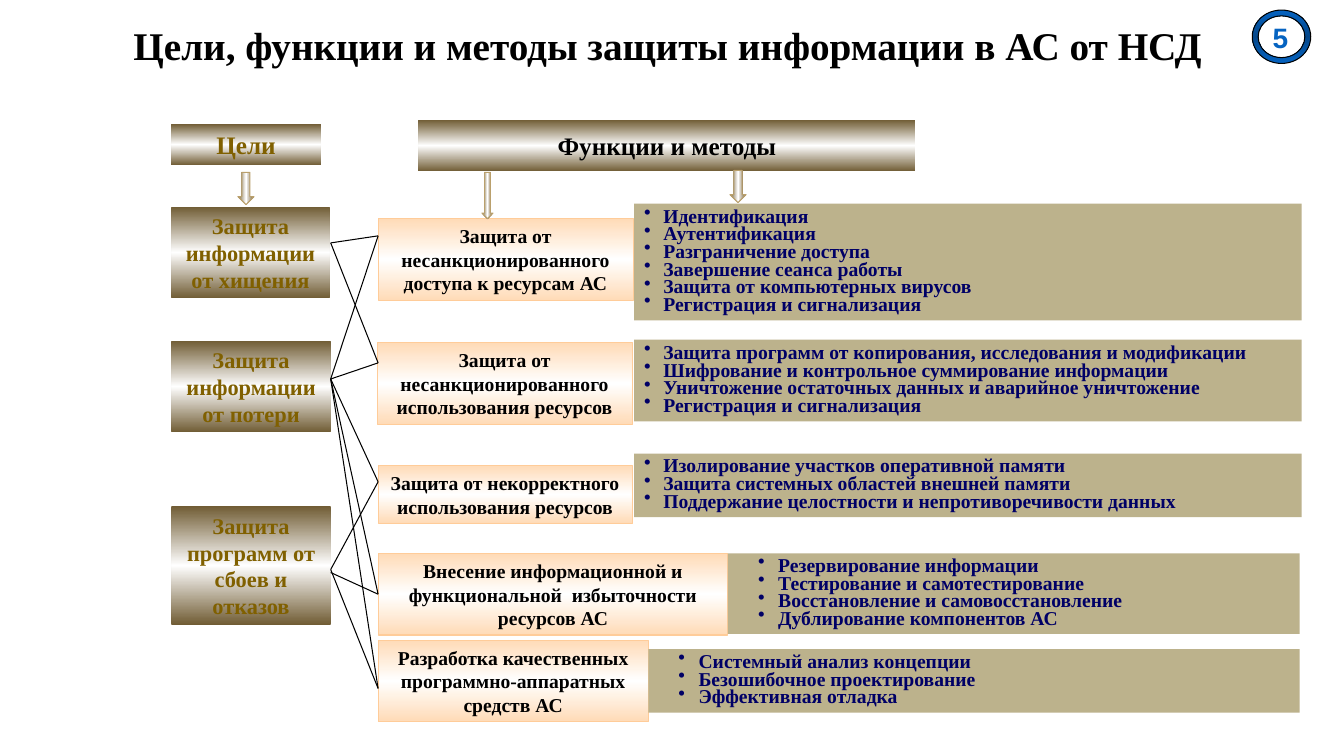
from copy import deepcopy
from dataclasses import dataclass

from pptx import Presentation
from pptx.dml.color import RGBColor as RGB
from pptx.enum.shapes import MSO_CONNECTOR as Line, MSO_SHAPE as Shape
from pptx.enum.text import MSO_ANCHOR as Anchor, MSO_AUTO_SIZE as AutoSize, PP_ALIGN as Align
from pptx.oxml.ns import qn
from pptx.util import Inches, Pt


@dataclass(frozen=True)
class Theme:
    serif: str = "Times New Roman"
    sans: str = "Arial"
    black: str = "000000"
    bronze: tuple = ("705C34", "FFFFFF", "705C34")
    peach: tuple = ("FFDBB7", "FFFFFF", "FFDBB7")
    ring: tuple = ("0563C1", "04478A", "0563C1")
    khaki: str = "BCB28C"
    peach_edge: str = "FFCC99"
    arrow_edge: str = "BAA06C"
    goal_text: str = "806000"
    method_text: str = "000066"
    number_text: str = "0563C1"
    title_size: int = 28
    number_size: int = 20
    head_size: int = 18
    goal_size: int = 16
    body_size: int = 14
    line_width: float = 0.75


class Diagram:
    def __init__(self, slide, theme):
        self.slide, self.theme = slide, theme

    def shape(self, kind, place, fill, edge=None, angle=90):
        """Preset shape; a tuple of colours gives an even gradient."""
        item = self.slide.shapes.add_shape(kind, *map(Inches, place))
        item.shadow.inherit = False
        if isinstance(fill, tuple):
            item.fill.gradient()
            item.fill.gradient_angle = angle
            stops = item._element.spPr.find(qn("a:gradFill")).find(qn("a:gsLst"))
            stops.append(deepcopy(stops[0]))
            for i, (stop, color) in enumerate(zip(item.fill.gradient_stops, fill)):
                stop.position = i / (len(fill) - 1)
                stop.color.rgb = RGB.from_string(color)
        else:
            item.fill.solid()
            item.fill.fore_color.rgb = RGB.from_string(fill)
        if edge:
            item.line.color.rgb = RGB.from_string(edge)
            item.line.width = Pt(self.theme.line_width)
        else:
            item.line.fill.background()
        return item

    def set_text(self, item, lines, size, color, font=None, align=Align.CENTER,
                 spacing=None, wrap=True, grow=True):
        frame = item.text_frame
        frame.text = "\n".join(lines)
        frame.word_wrap = wrap
        frame.vertical_anchor = Anchor.MIDDLE
        frame.auto_size = AutoSize.SHAPE_TO_FIT_TEXT if grow else AutoSize.NONE
        for paragraph in frame.paragraphs:
            paragraph.alignment = align
            paragraph.line_spacing = spacing
            paragraph.font.name = font or self.theme.serif
            paragraph.font.size = Pt(size)
            paragraph.font.bold = True
            paragraph.font.color.rgb = RGB.from_string(color)
        return frame

    def title(self, text, place):
        box = self.slide.shapes.add_textbox(*map(Inches, place))
        self.set_text(box, [text], self.theme.title_size, self.theme.black,
                      spacing=0.8, grow=False)

    def heading(self, text, place, color):
        box = self.shape(Shape.RECTANGLE, place, self.theme.bronze)
        self.set_text(box, [text], self.theme.head_size, color, wrap=False, grow=False)

    def goal(self, text, place):
        box = self.shape(Shape.RECTANGLE, place, self.theme.bronze)
        self.set_text(box, [text], self.theme.goal_size, self.theme.goal_text)

    def function(self, text, place):
        box = self.shape(Shape.RECTANGLE, place, self.theme.peach, self.theme.peach_edge)
        self.set_text(box, [text], self.theme.body_size, self.theme.black)
        return box

    def methods(self, items, place, level):
        box = self.shape(Shape.RECTANGLE, place, self.theme.khaki)
        frame = self.set_text(box, items, self.theme.body_size, self.theme.method_text,
                              align=Align.JUSTIFY, spacing=0.75)
        margin, hanging = [(0.19, 0.19), (0.4, 0.2)][level]
        for paragraph in frame.paragraphs:
            paragraph.level = level
            props = paragraph._p.get_or_add_pPr()
            props.set("marL", str(Inches(margin)))
            props.set("indent", str(-Inches(hanging)))
            bullet = props.makeelement(qn("a:buChar"), {"char": "•"})
            props.insert_element_before(bullet, "a:tabLst", "a:defRPr", "a:extLst")

    def arrow(self, place):
        self.shape(Shape.DOWN_ARROW, place, self.theme.bronze, self.theme.arrow_edge, 0)

    def link(self, start, end, target=None):
        line = self.slide.shapes.add_connector(Line.STRAIGHT, *map(Inches, start + end))
        line.line.color.rgb = RGB.from_string(self.theme.black)
        line.line.width = Pt(self.theme.line_width)
        props = line._element.spPr
        props.append(props.makeelement(qn("a:effectLst"), {}))
        if target is not None:
            line.end_connect(target, 1)

    def badge(self, number, place):
        ring = self.shape(Shape.DONUT, place, self.theme.ring, self.theme.black)
        ring.adjustments[0] = 0.11
        box = self.slide.shapes.add_textbox(*map(Inches, (12.54, 0.2, 0.32, 0.34)))
        frame = self.set_text(box, [number], self.theme.number_size,
                              self.theme.number_text, self.theme.sans)
        frame.margin_left = frame.margin_right = frame.margin_top = frame.margin_bottom = 0


GOALS = [
    ("Защита информации от хищения", (1.7, 2.05, 1.57, 0.91)),
    ("Защита информации от потери", (1.7, 3.38, 1.58, 0.91)),
    ("Защита программ от сбоев и отказов", (1.7, 5.02, 1.58, 1.18)),
]

# Function, its place, methods, their place, list level
ROWS = [
    ("Защита от несанкционированного доступа к ресурсам АС", (3.75, 2.17, 2.53, 0.81),
     ["Идентификация", "Аутентификация", "Разграничение доступа",
      "Завершение сеанса работы", "Защита от компьютерных вирусов",
      "Регистрация и сигнализация"], (6.29, 2.02, 6.62, 1.16), 0),
    ("Защита от несанкционированного использования ресурсов", (3.74, 3.4, 2.53, 0.81),
     ["Защита программ от копирования, исследования и модификации",
      "Шифрование и контрольное суммирование информации",
      "Уничтожение остаточных данных и аварийное уничтожение",
      "Регистрация и сигнализация"], (6.29, 3.37, 6.62, 0.81), 0),
    ("Защита от некорректного использования ресурсов", (3.75, 4.62, 2.52, 0.57),
     ["Изолирование участков оперативной памяти",
      "Защита системных областей внешней памяти",
      "Поддержание целостности и непротиворечивости данных"],
     (6.29, 4.5, 6.62, 0.63), 0),
    ("Внесение информационной и функциональной  избыточности ресурсов АС",
     (3.75, 5.49, 3.47, 0.81),
     ["Резервирование информации", "Тестирование и самотестирование",
      "Восстановление и самовосстановление", "Дублирование компонентов АС"],
     (7.22, 5.49, 5.67, 0.8), 1),
    ("Разработка качественных программно-аппаратных средств АС",
     (3.75, 6.35, 2.68, 0.81),
     ["Системный анализ концепции", "Безошибочное проектирование",
      "Эффективная отладка"], (6.43, 6.44, 6.46, 0.63), 1),
]

# Height where links leave a goal, and the functions (by row) they reach
LINKS = [(2.41, [0, 1]), (3.76, [0, 1, 2, 3, 4]), (5.65, [2, 4]), (5.68, [3])]
FUNCTION_ENTRY = [2.34, 3.6, 4.78, 5.88, 6.83]
SIDE_MIDDLE_ROW = 3
GOAL_EDGE, FUNCTION_EDGE = 3.28, 3.75
ARROWS = [(2.36, 1.71, 0.16, 0.32), (4.78, 1.71, 0.11, 0.46), (7.24, 1.69, 0.16, 0.32)]


def main():
    deck = Presentation()
    deck.slide_width, deck.slide_height = Inches(13.33), Inches(7.5)
    theme = Theme()
    diagram = Diagram(deck.slides.add_slide(deck.slide_layouts[6]), theme)

    # Title and slide number
    diagram.title("Цели, функции и методы защиты информации в АС от НСД",
                  (0.87, 0.2, 11.5, 0.57))
    diagram.badge("5", (12.42, 0.1, 0.58, 0.53))

    # Column headings
    diagram.heading("Цели", (1.7, 1.23, 1.48, 0.41), theme.goal_text)
    diagram.heading("Функции и методы", (4.15, 1.19, 4.93, 0.51), theme.black)

    # Goals, functions and methods
    for text, place in GOALS:
        diagram.goal(text, place)
    functions = []
    for text, place, methods, methods_place, level in ROWS:
        functions.append(diagram.function(text, place))
        diagram.methods(methods, methods_place, level)

    # Links from goals to functions
    for leave, rows in LINKS:
        for row in rows:
            diagram.link((GOAL_EDGE, leave), (FUNCTION_EDGE, FUNCTION_ENTRY[row]),
                         functions[row] if row == SIDE_MIDDLE_ROW else None)

    # Arrows under the headings
    for place in ARROWS:
        diagram.arrow(place)

    deck.save("out.pptx")


if __name__ == "__main__":
    main()
